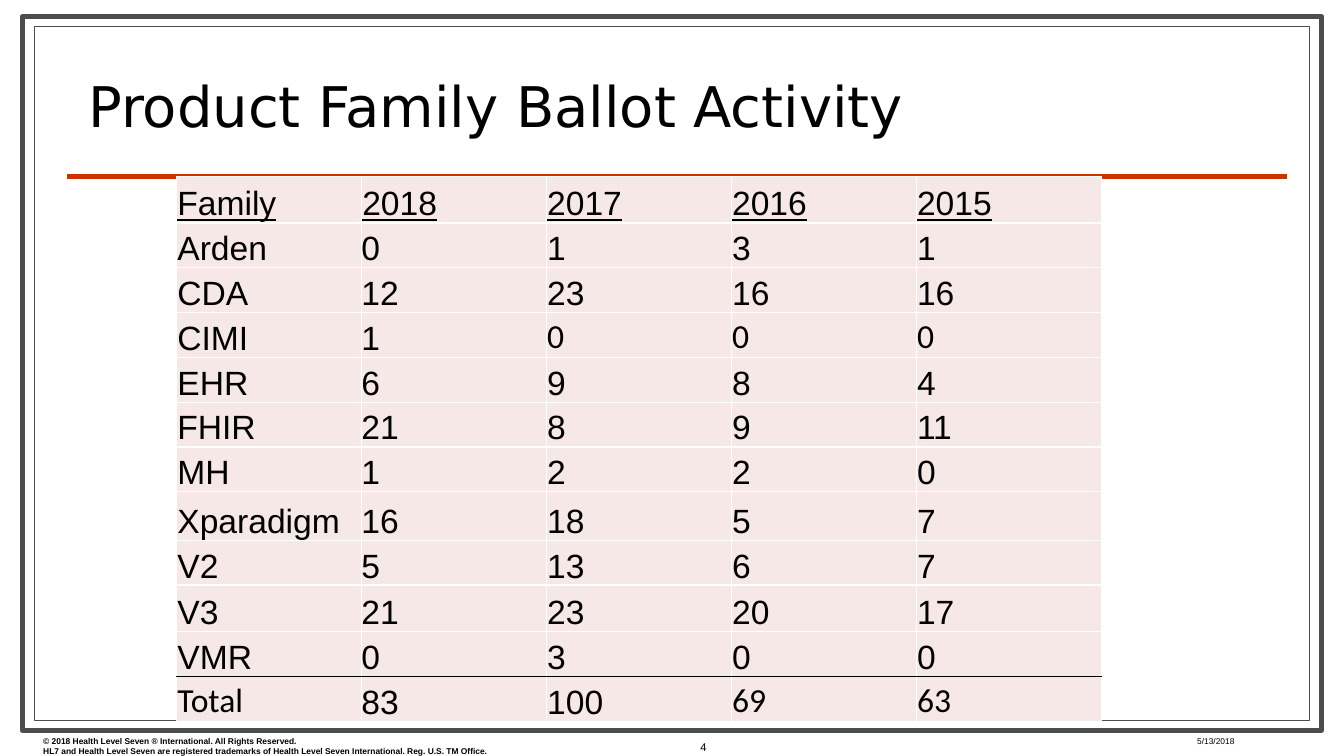
from dataclasses import dataclass

from lxml import etree
from pptx import Presentation
from pptx.dml.color import RGBColor
from pptx.enum.shapes import MSO_CONNECTOR, MSO_SHAPE
from pptx.enum.text import MSO_ANCHOR, PP_ALIGN
from pptx.oxml.ns import qn
from pptx.util import Cm, Pt

RECTANGLE = MSO_SHAPE.RECTANGLE
STRAIGHT = MSO_CONNECTOR.STRAIGHT
TOP, MIDDLE, BOTTOM = MSO_ANCHOR.TOP, MSO_ANCHOR.MIDDLE, MSO_ANCHOR.BOTTOM
LEFT, RIGHT = PP_ALIGN.LEFT, PP_ALIGN.RIGHT


@dataclass(frozen=True)
class Theme:
    white: str = "FFFFFF"
    black: str = "000000"
    frame: str = "4D4D4D"
    accent: str = "CC3300"
    cell: str = "F6E8E7"
    title_font: str = "DejaVu Sans"
    body_font: str = "Arial"
    alternate_font: str = "Calibri"
    title_size: float = 40
    table_size: float = 24
    number_size: float = 8
    footer_size: float = 6


THEME = Theme()

BALLOTS = [
    ("Family", "2018", "2017", "2016", "2015"),
    ("Arden", "0", "1", "3", "1"),
    ("CDA", "12", "23", "16", "16"),
    ("CIMI", "1", "0", "0", "0"),
    ("EHR", "6", "9", "8", "4"),
    ("FHIR", "21", "8", "9", "11"),
    ("MH", "1", "2", "2", "0"),
    ("Xparadigm", "16", "18", "5", "7"),
    ("V2", "5", "13", "6", "7"),
    ("V3", "21", "23", "20", "17"),
    ("VMR", "0", "3", "0", "0"),
    ("Total", "83", "100", "69", "63"),
]
ALTERNATE_FONT_COLUMNS = {"CIMI": (2, 3, 4), "Total": (0, 3, 4)}
ROW_HEIGHTS = {"Family": 1.17, "Xparadigm": 1.22, "V3": 1.17}
ROW_HEIGHT = 1.13
COLUMN_WIDTH = 4.66

COPYRIGHT = (
    "© 2018 Health Level Seven ® International. All Rights Reserved.",
    "HL7 and Health Level Seven are registered trademarks of "
    "Health Level Seven International. Reg. U.S. TM Office.",
)


def color(value):
    return RGBColor.from_string(value)


def style(paragraph, size, font=THEME.body_font, bold=False, underline=False):
    paragraph.font.size = Pt(size)
    paragraph.font.name = font
    paragraph.font.bold = bold
    paragraph.font.underline = underline
    paragraph.font.color.rgb = color(THEME.black)


def add_frame(page, left, top, width, height, weight):
    frame = page.shapes.add_shape(RECTANGLE, Cm(left), Cm(top), Cm(width), Cm(height))
    frame.shadow.inherit = False
    frame.fill.solid()
    frame.fill.fore_color.rgb = color(THEME.white)
    frame.line.color.rgb = color(THEME.frame)
    frame.line.width = Pt(weight)


def add_rule(page, left, right, top):
    rule = page.shapes.add_connector(STRAIGHT, Cm(left), Cm(top), Cm(right), Cm(top))
    rule.line.color.rgb = color(THEME.accent)
    rule.line.width = Pt(3)
    etree.SubElement(rule._element.spPr, qn("a:effectLst"))


def add_text(page, left, top, width, height, lines, size, font=THEME.body_font,
             bold=False, anchor=TOP, align=LEFT, spacing=1.0):
    box = page.shapes.add_textbox(Cm(left), Cm(top), Cm(width), Cm(height))
    frame = box.text_frame
    frame.word_wrap = True
    frame.vertical_anchor = anchor
    frame.text = "\n".join(lines)
    for paragraph in frame.paragraphs:
        paragraph.alignment = align
        paragraph.line_spacing = spacing
        style(paragraph, size, font, bold)


def set_borders(cell, top, bottom):
    sides = {"lnL": THEME.white, "lnR": THEME.white, "lnT": top, "lnB": bottom}
    properties = cell._tc.get_or_add_tcPr()
    for side, value in sides.items():
        line = etree.SubElement(properties, qn(f"a:{side}"), w=str(Pt(1)))
        fill = etree.SubElement(line, qn("a:solidFill"))
        etree.SubElement(fill, qn("a:srgbClr"), val=value)


def fill_cell(cell, text, font, inset, header, top, bottom):
    set_borders(cell, top, bottom)
    cell.fill.solid()
    cell.fill.fore_color.rgb = color(THEME.cell)
    cell.vertical_anchor = BOTTOM
    cell.margin_left = cell.margin_right = cell.margin_top = Cm(inset)
    cell.margin_bottom = Cm(0)
    cell.text = text
    style(cell.text_frame.paragraphs[0], THEME.table_size, font, underline=header)


def add_ballot_table(page, left, top):
    heights = [ROW_HEIGHTS.get(record[0], ROW_HEIGHT) for record in BALLOTS]
    columns = len(BALLOTS[0])
    table = page.shapes.add_table(
        len(BALLOTS), columns, Cm(left), Cm(top),
        Cm(COLUMN_WIDTH * columns), Cm(sum(heights))).table
    for column in table.columns:
        column.width = Cm(COLUMN_WIDTH)
    last = len(BALLOTS) - 1
    for row, record in enumerate(BALLOTS):
        table.rows[row].height = Cm(heights[row])
        header = row == 0
        upper = THEME.black if row == last else THEME.white
        lower = THEME.black if row == last - 1 else THEME.white
        alternate = ALTERNATE_FONT_COLUMNS.get(record[0], ())
        for column, text in enumerate(record):
            font = THEME.alternate_font if column in alternate else THEME.body_font
            inset = 0 if column == 1 and not header else 0.02
            fill_cell(table.cell(row, column), text, font, inset, header, upper, lower)


def main():
    deck = Presentation()
    deck.slide_width, deck.slide_height = Cm(33.87), Cm(19.05)
    page = deck.slides.add_slide(deck.slide_layouts[6])
    add_frame(page, 0.56, 0.42, 32.75, 17.98, 3.5)
    add_frame(page, 0.86, 0.67, 32.15, 17.48, 0.75)
    add_rule(page, 1.7, 32.44, 4.45)
    add_text(page, 0.84, 18.42, 16.36, 0.76, COPYRIGHT, THEME.footer_size, bold=True)
    add_text(page, 1.98, 1.32, 30.2, 2.29, ["Product Family Ballot Activity"],
             THEME.title_size, THEME.title_font, anchor=BOTTOM, spacing=0.8)
    add_text(page, 29.92, 18.42, 3.1, 0.43, ["5/13/2018"], THEME.footer_size)
    add_text(page, 16.08, 18.16, 1.98, 1.32, ["4"], THEME.number_size,
             anchor=MIDDLE, align=RIGHT)
    add_ballot_table(page, 4.45, 4.45)
    deck.save("out.pptx")


if __name__ == "__main__":
    main()
